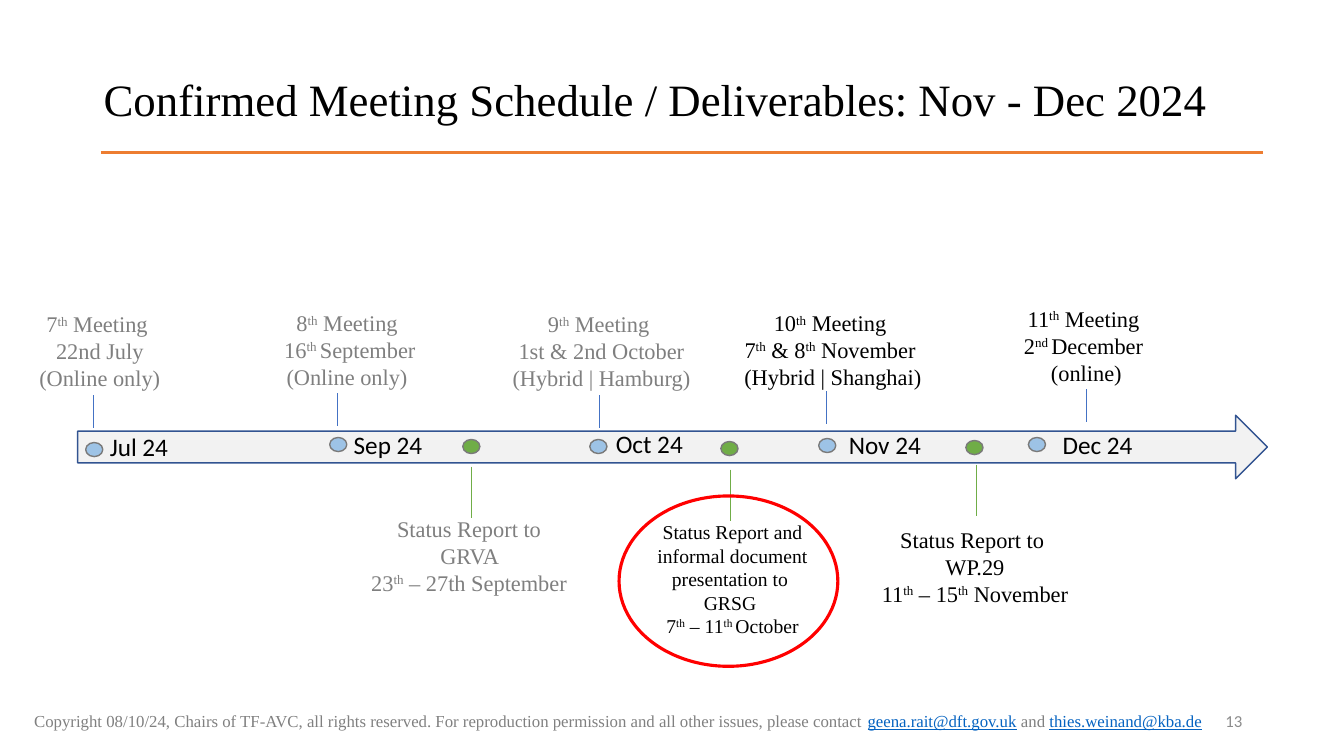
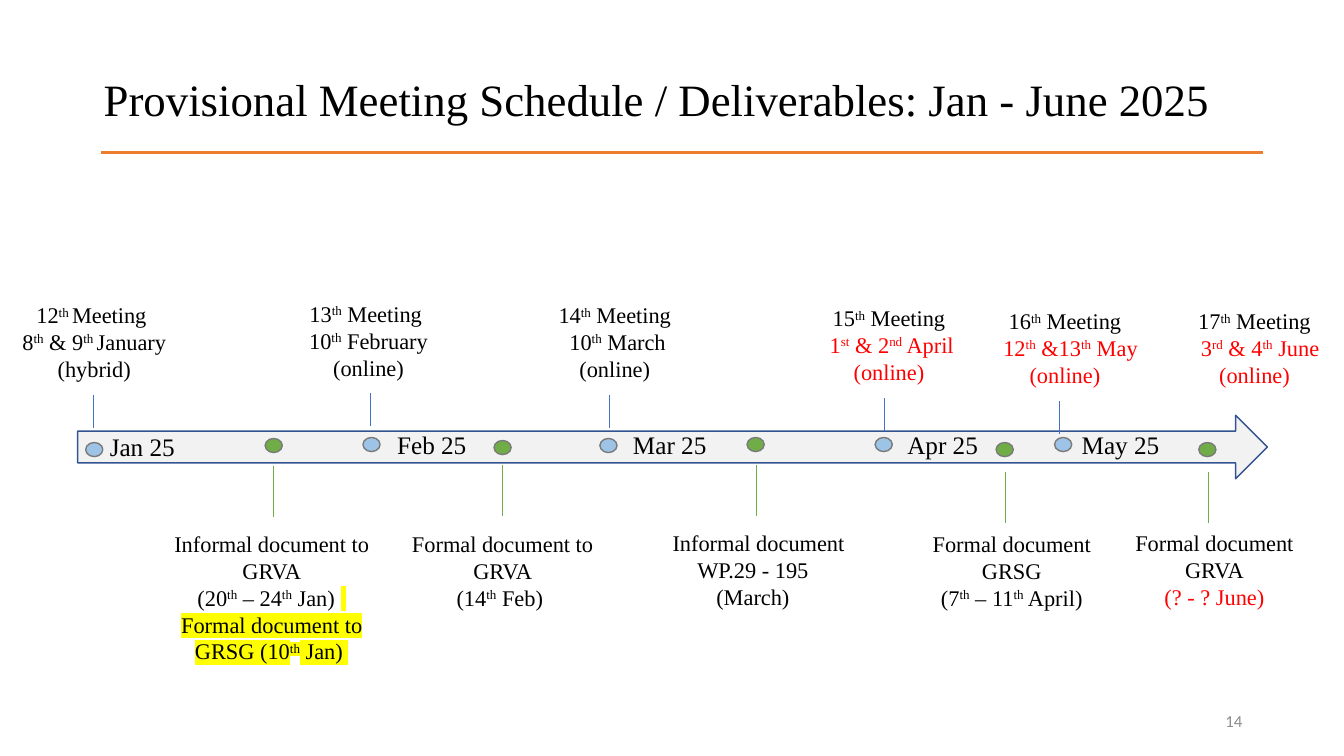
from dataclasses import dataclass

from lxml import etree
from pptx import Presentation
from pptx.dml.color import RGBColor
from pptx.enum.shapes import MSO_CONNECTOR, MSO_SHAPE
from pptx.enum.text import MSO_ANCHOR, MSO_AUTO_SIZE, PP_ALIGN
from pptx.oxml.ns import qn
from pptx.util import Emu, Pt

PX = 9144  # 100 px to the inch
LEFT, CENTER, RIGHT = PP_ALIGN.LEFT, PP_ALIGN.CENTER, PP_ALIGN.RIGHT
TOP, MIDDLE = MSO_ANCHOR.TOP, MSO_ANCHOR.MIDDLE
ARROW, OVAL = MSO_SHAPE.RIGHT_ARROW, MSO_SHAPE.OVAL
STRAIGHT = MSO_CONNECTOR.STRAIGHT
GROW, FIXED = MSO_AUTO_SIZE.SHAPE_TO_FIT_TEXT, MSO_AUTO_SIZE.NONE


@dataclass(frozen=True)
class Theme:
    serif: str = "Times New Roman"
    sans: str = "Calibri"
    title: int = 32
    month: int = 18
    body: int = 16
    compact: int = 14
    small: int = 12
    ink: str = "000000"
    past: str = "7F7F7F"
    footer: str = "808080"
    number: str = "8C8C8C"
    link: str = "0563C1"
    red: str = "FF0000"
    marker: str = "FFFF00"
    rule: str = "ED7D31"
    arrow_fill: str = "F2F2F2"
    arrow_line: str = "325491"
    dot_line: str = "7A7A7A"
    meeting_dot: str = "9DC3E6"
    meeting_stem: str = "4472C4"
    report: str = "70AD47"


T = Theme()
DOT_W, DOT_H = 17, 14
MEETING_STEM, REPORT_STEM = 33, 51


@dataclass(frozen=True)
class Month:
    x: int
    y: int
    text: str
    w: int = 98


@dataclass(frozen=True)
class Event:
    """A dot, a stem and a label; lengths in px."""
    dot: tuple[int, int]
    stem: tuple[int, int]
    box: tuple[int, int, int, int]
    lines: tuple[str, ...]
    wrap: bool = True
    color: str = T.ink
    size: int = T.body


@dataclass(frozen=True)
class Schedule:
    title: str
    number: int
    month_font: str
    months: tuple[Month, ...]
    meetings: tuple[Event, ...]
    reports: tuple[Event, ...]


def rgb(color: str) -> RGBColor:
    return RGBColor.from_string(color)


def split_marks(line: str) -> list[tuple[str, frozenset[str]]]:
    """Cut at the toggles: ^ superscript, * red, ~ highlight, _ link."""
    parts, on, buf = [], frozenset(), ""
    for ch in line:
        if ch in "^*~_":
            if buf:
                parts.append((buf, on))
            on, buf = on ^ {ch}, ""
        else:
            buf += ch
    return parts + [(buf, on)] if buf else parts


def add_text(s, box: tuple[int, int, int, int], *lines: str, size: int = T.body,
             font: str = T.serif, color: str = T.ink, align=LEFT, anchor=TOP,
             wrap: bool = True, grow: bool = True, spacing: float = 1.0) -> None:
    tf = s.shapes.add_textbox(*(Emu(v * PX) for v in box)).text_frame
    tf.word_wrap = wrap
    tf.auto_size = GROW if grow else FIXED
    tf.vertical_anchor = anchor
    for i, line in enumerate(lines):
        p = tf.add_paragraph() if i else tf.paragraphs[0]
        p.alignment = align
        p.line_spacing = spacing
        for text, marks in split_marks(line):
            r = p.add_run()
            r.text = text
            r.font.name, r.font.size = font, Pt(size)
            shade = T.red if "*" in marks else T.link if "_" in marks else color
            r.font.color.rgb = rgb(shade)
            rpr = r.font._element
            if "_" in marks:
                r.font.underline = True
            if "^" in marks:
                rpr.set("baseline", "30000")
            if "~" in marks:
                hl = etree.Element(qn("a:highlight"))
                etree.SubElement(hl, qn("a:srgbClr")).set("val", T.marker)
                rpr.find(qn("a:solidFill")).addnext(hl)


def add_preset(s, kind, box: tuple[int, int, int, int], line: str,
               fill: str | None = None, width: float = 1) -> None:
    sp = s.shapes.add_shape(kind, *(Emu(v * PX) for v in box))
    sp.shadow.inherit = False
    if fill:
        sp.fill.solid()
        sp.fill.fore_color.rgb = rgb(fill)
    else:
        sp.fill.background()
    sp.line.color.rgb = rgb(line)
    sp.line.width = Pt(width)


def add_line(s, x1: int, y1: int, x2: int, y2: int, color: str, width: float) -> None:
    cx = s.shapes.add_connector(STRAIGHT, *(Emu(v * PX) for v in (x1, y1, x2, y2)))
    cx.line.color.rgb = rgb(color)
    cx.line.width = Pt(width)
    etree.SubElement(cx._element.spPr, qn("a:effectLst"))


def add_event(s, e: Event, dot: str, stem: str, length: int) -> None:
    add_preset(s, OVAL, (*e.dot, DOT_W, DOT_H), T.dot_line, dot)
    x, y = e.stem
    add_line(s, x, y, x, y + length, stem, 0.5)
    add_text(s, e.box, *e.lines, size=e.size, color=e.color, align=CENTER, wrap=e.wrap)


def add_schedule(prs, plan: Schedule):
    s = prs.slides.add_slide(prs.slide_layouts[6])
    add_text(s, (93, 29, 1266, 145), plan.title, size=T.title, anchor=MIDDLE,
             grow=False, spacing=0.9)
    add_line(s, 100, 151, 1253, 151, T.rule, 2.25)
    add_preset(s, ARROW, (77, 412, 1180, 63), T.arrow_line, T.arrow_fill)
    for m in plan.months:
        add_text(s, (m.x, m.y, m.w, 40), m.text, size=T.month, font=plan.month_font)
    for e in plan.meetings:
        add_event(s, e, T.meeting_dot, T.meeting_stem, MEETING_STEM)
    for e in plan.reports:
        add_event(s, e, T.report, T.report, REPORT_STEM)
    add_text(s, (942, 695, 300, 40), str(plan.number), size=T.small, font=T.sans,
             color=T.number, align=RIGHT, anchor=MIDDLE, grow=False)
    return s


CONFIRMED = Schedule(
    "Confirmed Meeting Schedule / Deliverables: Nov - Dec 2024", 13, T.sans,
    months=(
        Month(99, 423, "Jul 24"),
        Month(341, 421, "Sep 24", 124),
        Month(601, 420, "Oct 24", 124),
        Month(832, 421, "Nov 24"),
        Month(1044, 421, "Dec 24"),
    ),
    meetings=(
        Event((85, 439), (93, 392), (28, 303, 142, 91),
              ("7^th^ Meeting ", "22nd July", "(Online only)"), False, T.past),
        Event((327, 434), (335, 390), (270, 302, 154, 91),
              ("8^th^ Meeting ", "16^th ^September", "(Online only) "), False, T.past),
        Event((585, 436), (594, 392), (497, 303, 199, 91),
              ("9^th^ Meeting ", "1st & 2nd October", "(Hybrid | Hamburg)"),
              False, T.past),
        Event((812, 435), (820, 388), (695, 302, 262, 91),
              ("10^th^ Meeting ", "7^th^ & 8^th^ November ", "(Hybrid | Shanghai)")),
        Event((1020, 434), (1077, 386), (946, 298, 263, 94),
              ("11^th^ Meeting ", "2^nd ^December ", "(online)")),
    ),
    reports=(
        Event((459, 436), (468, 463), (358, 506, 220, 91),
              ("Status Report to ", "GRVA ", "23^th^ – 27th September "), color=T.past),
        Event((715, 438), (724, 466), (617, 511, 219, 128),
              ("Status Report and informal document presentation to ", "GRSG ",
               "7^th^ – 11^th ^October"), size=T.compact),
        Event((958, 437), (968, 461), (857, 517, 220, 91),
              ("Status Report to ", "WP.29", "11^th^ – 15^th^ November")),
    ),
)

PROVISIONAL = Schedule(
    "Provisional Meeting Schedule / Deliverables: Jan - June 2025", 14, T.serif,
    months=(
        Month(99, 423, "Jan 25"),
        Month(384, 421, "Feb 25", 124),
        Month(618, 421, "Mar 25", 124),
        Month(890, 421, "Apr 25"),
        Month(1063, 421, "May 25"),
    ),
    meetings=(
        Event((85, 439), (93, 392), (-33, 294, 253, 91),
              ("12^th ^Meeting ", "8^th^ & 9^th ^January", "(hybrid)")),
        Event((360, 434), (367, 390), (292, 293, 147, 91),
              ("13^th^ Meeting ", "10^th^ February", "(online)"), False),
        Event((595, 435), (604, 392), (542, 294, 141, 91),
              ("14^th^ Meeting ", "10^th^ March", "(online) "), False),
        Event((868, 434), (877, 395), (808, 297, 153, 91),
              ("15^th^ Meeting ", "*1^st^ & 2^nd^ April*", "*(online) *"), False),
        Event((1046, 434), (1051, 398), (974, 300, 170, 91),
              ("16^th^ Meeting ", " *12^th^ &13^th^ May*", "*(online) *"), False),
    ),
    reports=(
        Event((263, 435), (271, 462), (144, 521, 251, 145),
              ("Informal document to", "GRVA", "(20^th^ – 24^th^ Jan) ~ ~",
               "~Formal document to GRSG (10^th^ Jan) ~")),
        Event((490, 437), (498, 461), (373, 521, 251, 91),
              ("Formal document to", "GRVA", "(14^th^ Feb) ")),
        Event((741, 434), (750, 461), (629, 520, 241, 91),
              (" Informal document", "WP.29 - 195 ", "(March) ")),
        Event((988, 439), (997, 468), (881, 521, 245, 91),
              ("Formal document", "GRSG", "(7^th^ – 11^th^ April)")),
        Event((1189, 439), (1198, 468), (1082, 520, 245, 91),
              ("Formal document", "GRVA", "*(? - ? June)*")),
    ),
)


def main() -> None:
    prs = Presentation()
    prs.slide_width, prs.slide_height = Emu(1333 * PX), Emu(750 * PX)

    s = add_schedule(prs, CONFIRMED)
    add_preset(s, OVAL, (614, 492, 217, 169), T.red, width=2.25)
    add_text(s, (24, 700, 1192, 30),
             "Copyright 08/10/24, Chairs of TF-AVC, all rights reserved. For reproduction "
             "permission and all other issues, please contact "
             "_geena.rait@dft.gov.uk_ and _thies.weinand@kba.de_ ",
             size=T.small, color=T.footer)

    s = add_schedule(prs, PROVISIONAL)
    add_text(s, (1173, 300, 148, 91), "17^th^ Meeting ", " *3^rd^ & 4^th^ June*",
             "*(online) *", align=CENTER, wrap=False)

    prs.save("out.pptx")


if __name__ == "__main__":
    main()
